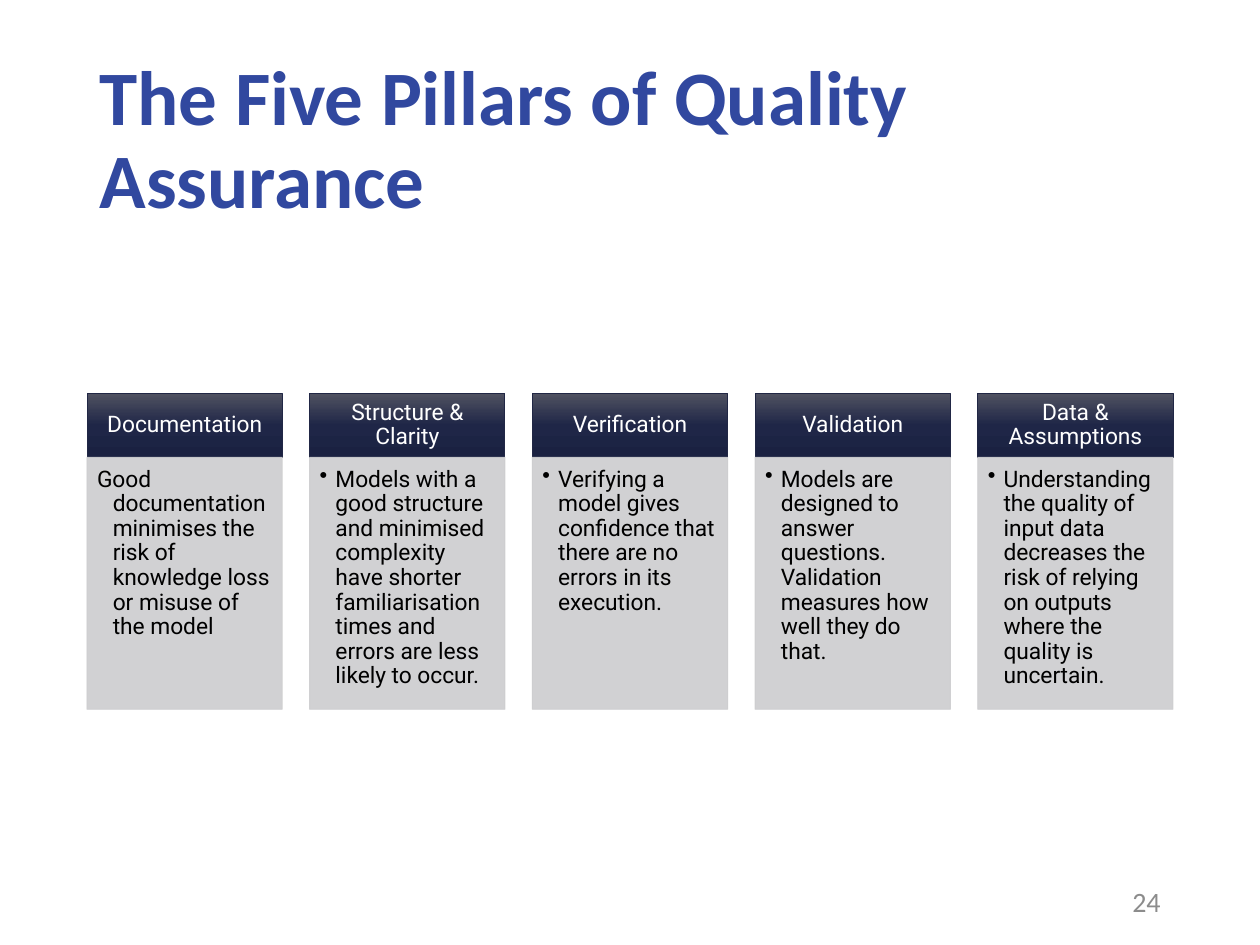
from dataclasses import dataclass

from pptx import Presentation
from pptx.dml.color import RGBColor
from pptx.enum.shapes import MSO_SHAPE
from pptx.enum.text import MSO_ANCHOR, MSO_AUTO_SIZE, PP_ALIGN
from pptx.oxml import parse_xml
from pptx.oxml.ns import nsdecls, qn
from pptx.util import Inches, Pt


@dataclass(frozen=True)
class Theme:
    title_font: str = "Calibri"
    pillar_font: str = "Roboto"
    title_size: float = 44
    pillar_size: float = 13
    number_size: float = 16
    title: str = "31489F"
    number: str = "8C8C8C"
    header_text: str = "FFFFFF"
    header_line: str = "212745"
    header_gradient: tuple = ((0, "505261"), (50, "1F2647"), (100, "1A2141"))
    body_text: str = "000000"
    body_fill: str = "CDCDCF"
    body_opacity: int = 90


THEME = Theme()
LEFT, HEADER_TOP, BODY_TOP = 0.69, 3.12, 3.63
PILLAR_WIDTH, PILLAR_PITCH = 1.55, 1.7675
PILLARS = [
    ("Documentation",
     "Good documentation minimises the risk of knowledge loss or misuse of the model",
     False),
    ("Structure & Clarity",
     "Models with a good structure and minimised complexity have shorter "
     "familiarisation times and errors are less likely to occur.",
     True),
    ("Verification",
     "Verifying a model gives confidence that there are no errors in its execution.",
     True),
    ("Validation",
     "Models are designed to answer questions. Validation measures how well they do that.",
     True),
    ("Data & Assumptions",
     "Understanding the quality of input data decreases the risk of relying on "
     "outputs where the quality is uncertain.",
     True),
]


def add_run(paragraph, text, font, size, color, bold=False):
    run = paragraph.add_run()
    run.text = text
    run.font.name = font
    run.font.size = Pt(size)
    run.font.bold = bold
    run.font.color.rgb = RGBColor.from_string(color)


def set_frame(frame, anchor, insets=(0.1, 0.05, 0.1, 0.05)):
    frame.word_wrap = True
    frame.auto_size = MSO_AUTO_SIZE.NONE
    frame.vertical_anchor = anchor
    (frame.margin_left, frame.margin_top,
     frame.margin_right, frame.margin_bottom) = map(Inches, insets)


def add_title(slide, text):
    title = slide.shapes.title
    title.left, title.top = Inches(LEFT), Inches(0.4)
    title.width, title.height = Inches(8.99), Inches(1.45)
    set_frame(title.text_frame, MSO_ANCHOR.MIDDLE)
    paragraph = title.text_frame.paragraphs[0]
    paragraph.alignment = PP_ALIGN.LEFT
    paragraph.line_spacing = 0.9
    add_run(paragraph, text, THEME.title_font, THEME.title_size, THEME.title, True)


def add_page_number(slide, text):
    box = slide.shapes.add_textbox(Inches(7.06), Inches(6.95), Inches(2.25), Inches(0.4))
    set_frame(box.text_frame, MSO_ANCHOR.MIDDLE)
    paragraph = box.text_frame.paragraphs[0]
    paragraph.alignment = PP_ALIGN.RIGHT
    paragraph.space_after = Pt(6)
    add_run(paragraph, text, THEME.title_font, THEME.number_size, THEME.number)


def add_panel(slide, left, top, height, line_color):
    panel = slide.shapes.add_shape(
        MSO_SHAPE.RECTANGLE, Inches(left), Inches(top), Inches(PILLAR_WIDTH), Inches(height))
    panel.shadow.inherit = False
    panel.line.color.rgb = RGBColor.from_string(line_color)
    panel.line.width = Pt(0.5)
    return panel


def fill_gradient(shape, stops):
    shape.fill.background()
    empty_fill = shape.element.spPr.find(qn("a:noFill"))
    stop_xml = "".join(
        f'<a:gs pos="{position * 1000}"><a:srgbClr val="{color}"/></a:gs>'
        for position, color in stops)
    gradient = parse_xml(
        f'<a:gradFill {nsdecls("a")} rotWithShape="1"><a:gsLst>{stop_xml}</a:gsLst>'
        '<a:lin ang="5400000" scaled="0"/></a:gradFill>')
    shape.element.spPr.replace(empty_fill, gradient)


def set_opacity(shape, percent):
    for color in shape.element.spPr.iter(qn("a:srgbClr")):
        color.append(parse_xml(f'<a:alpha {nsdecls("a")} val="{percent * 1000}"/>'))


def set_hanging_indent(paragraph, indent, bulleted):
    properties = paragraph._p.get_or_add_pPr()
    properties.set("marL", str(Inches(indent)))
    properties.set("indent", str(-Inches(indent)))
    bullet = 'buChar char="•"' if bulleted else "buNone"
    properties.append(parse_xml(f'<a:{bullet} {nsdecls("a")}/>'))


def add_header(slide, left, text):
    header = add_panel(slide, left, HEADER_TOP, BODY_TOP - HEADER_TOP, THEME.header_line)
    fill_gradient(header, THEME.header_gradient)
    set_frame(header.text_frame, MSO_ANCHOR.MIDDLE, (0.1, 0.06, 0.1, 0.06))
    paragraph = header.text_frame.paragraphs[0]
    paragraph.alignment = PP_ALIGN.CENTER
    paragraph.line_spacing = 0.9
    add_run(paragraph, text, THEME.pillar_font, THEME.pillar_size, THEME.header_text)


def add_body(slide, left, text, bulleted):
    body = add_panel(slide, left, BODY_TOP, 2, THEME.body_fill)
    body.fill.solid()
    body.fill.fore_color.rgb = RGBColor.from_string(THEME.body_fill)
    set_opacity(body, THEME.body_opacity)
    set_frame(body.text_frame, MSO_ANCHOR.TOP, (0.08, 0.08, 0.1, 0.11))
    paragraph = body.text_frame.paragraphs[0]
    paragraph.level = 1
    paragraph.alignment = PP_ALIGN.LEFT
    paragraph.line_spacing = 0.9
    set_hanging_indent(paragraph, 0.125, bulleted)
    add_run(paragraph, text, THEME.pillar_font, THEME.pillar_size, THEME.body_text)


def main():
    presentation = Presentation()
    presentation.slide_width, presentation.slide_height = Inches(10), Inches(7.5)
    slide = presentation.slides.add_slide(presentation.slide_layouts[5])
    add_title(slide, "The Five Pillars of Quality Assurance")
    add_page_number(slide, "24")
    for index, (heading, description, bulleted) in enumerate(PILLARS):
        left = LEFT + index * PILLAR_PITCH
        add_header(slide, left, heading)
        add_body(slide, left, description, bulleted)
    presentation.save("out.pptx")


if __name__ == "__main__":
    main()
